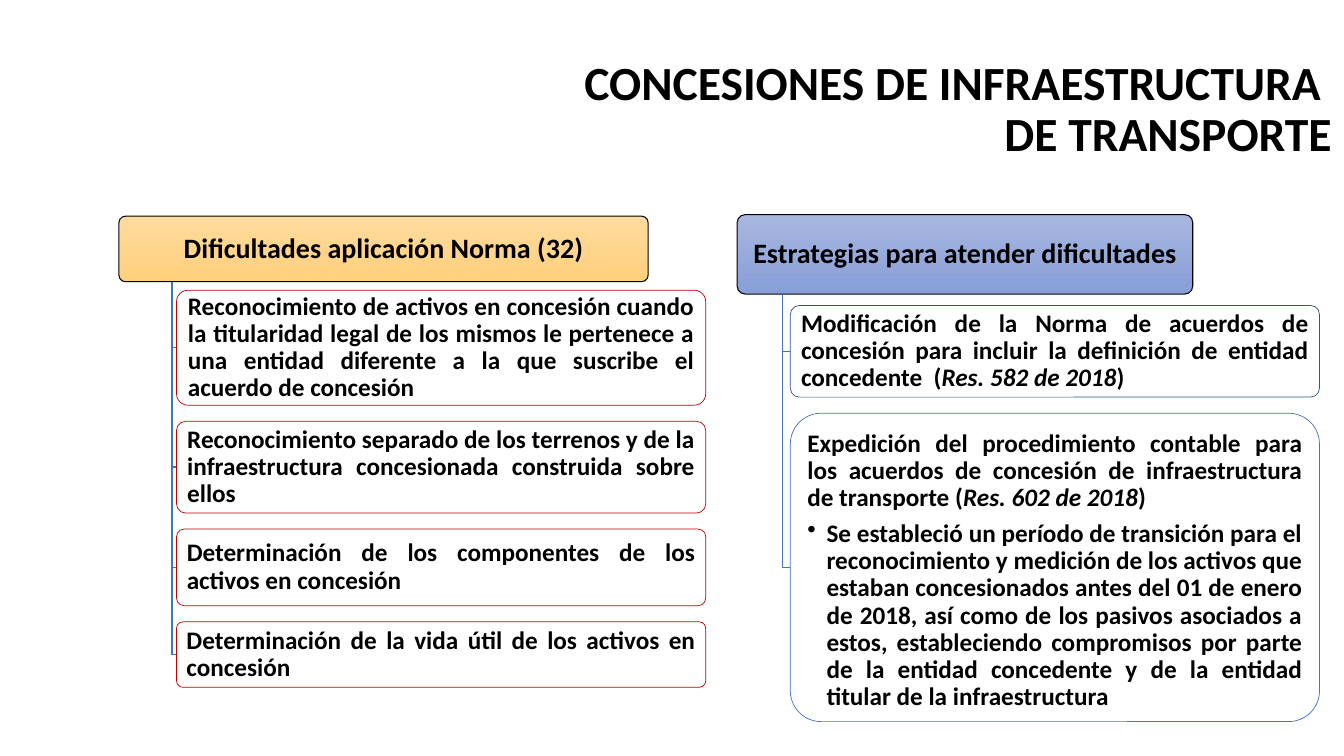
from lxml import etree
from pptx import Presentation
from pptx import util as u
from pptx.dml.color import RGBColor
from pptx.enum import shapes, text
from pptx.oxml.ns import qn

BLACK = RGBColor(0x00, 0x00, 0x00)
WHITE = RGBColor(0xFF, 0xFF, 0xFF)
RED = RGBColor(0xC0, 0x00, 0x00)
BLUE = RGBColor(0x44, 0x72, 0xC4)
NAVY = RGBColor(0x2F, 0x55, 0x97)
AMBER = (RGBColor(0xFF, 0xDB, 0x9E), RGBColor(0xFF, 0xD0, 0x7C))
PERIWINKLE = (RGBColor(0xA8, 0xB7, 0xDF), RGBColor(0x88, 0x9E, 0xD7))

ALIGN = text.PP_ALIGN
ANCHOR = text.MSO_ANCHOR

DIFFICULTIES = [
    (15.2, ["Reconocimiento de activos en concesión cuando la titularidad legal de los "
            "mismos le pertenece a una entidad diferente a la que suscribe el acuerdo "
            "de concesión"]),
    (12.13, ["Reconocimiento separado de los terrenos y de la infraestructura "
             "concesionada construida sobre ellos"]),
    (10.13, ["Determinación de los componentes de los activos en concesión"]),
    (8.67, ["Determinación de la vida útil de los activos en concesión"]),
]
AMENDMENT = (12.13, [
    "Modificación de la Norma de acuerdos de concesión para incluir la definición de "
    "entidad concedente  (*Res. 582 de 2018*)"])
PROCEDURE = (40.8, [
    "Expedición del procedimiento contable para los acuerdos de concesión de "
    "infraestructura de transporte (*Res. 602 de 2018*)",
    "• Se estableció un período de transición para el reconocimiento y medición de los "
    "activos que estaban concesionados antes del 01 de enero de 2018, así como de los "
    "pasivos asociados a estos, estableciendo compromisos por parte de la entidad "
    "concedente y de la entidad titular de la infraestructura"])


class ConcessionSlide:
    """Places elements by percentages of the slide's width and height."""

    font = "Calibri"
    item_width = 39.38
    item_gap = 2.13

    def __init__(self, deck):
        self.width, self.height = deck.slide_width, deck.slide_height
        self.page = deck.slides.add_slide(deck.slide_layouts[5])

    def x(self, share):
        return u.Emu(round(self.width * share / 100))

    def y(self, share):
        return u.Emu(round(self.height * share / 100))

    def set_text(self, frame, paragraphs, size=18, align=ALIGN.JUSTIFY,
                 anchor=ANCHOR.MIDDLE, inset=0.08):
        """Fill a frame; *...* is italic, a leading • a bullet, a newline a line break."""
        frame.word_wrap = True
        frame.auto_size = text.MSO_AUTO_SIZE.NONE
        frame.vertical_anchor = anchor
        frame.margin_left = frame.margin_right = u.Inches(inset)
        frame.margin_top = frame.margin_bottom = u.Inches(min(inset, 0.08))
        for index, words in enumerate(paragraphs):
            para = frame.add_paragraph() if index else frame.paragraphs[0]
            if words.startswith("• "):
                words = words[2:]
                self.add_bullet(para)
            para.alignment = align
            para.line_spacing = 0.9
            if index < len(paragraphs) - 1:
                para.space_after = u.Pt(0.35 * size)
            for row, line in enumerate(words.split("\n")):
                if row:
                    para.add_line_break()
                for part, phrase in enumerate(line.split("*")):
                    span = para.add_run()
                    span.text = phrase
                    span.font.name = self.font
                    span.font.size = u.Pt(size)
                    span.font.bold = True
                    span.font.italic = part % 2 == 1
                    span.font.color.rgb = BLACK

    def add_bullet(self, para):
        props = para._p.get_or_add_pPr()
        indent = u.Inches(0.19)
        props.set("marL", str(indent))
        props.set("indent", str(-indent))
        etree.SubElement(props, qn("a:buChar")).set("char", "•")

    def title(self, words):
        box = self.page.shapes.title
        box.left, box.top = self.x(38.8), self.y(6.8)
        box.width, box.height = self.x(61.05), self.y(12.27)
        self.set_text(box.text_frame, [words], size=34, align=ALIGN.RIGHT,
                      anchor=ANCHOR.TOP, inset=0.1)

    def box(self, left, top, width, height, line, weight):
        box = self.page.shapes.add_shape(
            shapes.MSO_SHAPE.ROUNDED_RECTANGLE,
            self.x(left), self.y(top), self.x(width), self.y(height))
        box.adjustments[0] = 0.1
        box.shadow.inherit = False
        box.line.color.rgb = line
        box.line.width = u.Pt(weight)
        return box

    def header(self, words, left, top, width, height, colours):
        box = self.box(left, top, width, height, BLACK, 0.75)
        box.fill.gradient()
        box.fill.gradient_angle = 270
        for stop, colour, position in zip(box.fill.gradient_stops, colours, (0, 1)):
            stop.color.rgb = colour
            stop.position = position
        self.set_text(box.text_frame, [words], size=20, align=ALIGN.CENTER)

    def item(self, paragraphs, left, top, height, line):
        box = self.box(left, top, self.item_width, height, line, 0.5)
        box.fill.solid()
        box.fill.fore_color.rgb = WHITE
        colour = box._element.spPr.find(qn("a:solidFill"))[0]
        etree.SubElement(colour, qn("a:alpha")).set("val", "90000")
        anchor = ANCHOR.TOP if len(paragraphs) > 1 else ANCHOR.MIDDLE
        self.set_text(box.text_frame, paragraphs, anchor=anchor)

    def branch(self, rail, top, right, middle):
        """Draw the elbow from a header's underside to the side of an item."""
        builder = self.page.shapes.build_freeform(self.x(rail), self.y(top))
        builder.add_line_segments(
            [(self.x(rail), self.y(middle)), (self.x(right), self.y(middle))],
            close=False)
        elbow = builder.convert_to_shape()
        elbow.shadow.inherit = False
        elbow.fill.background()
        elbow.line.color.rgb = BLUE
        elbow.line.width = u.Pt(1)

    def tree(self, heading, header_area, colours, item_left, first_top, items, lines):
        """Hang a column of items from a header, on a rail a tenth of the way in."""
        left, top, width, height = header_area
        self.header(heading, left, top, width, height, colours)
        item_top = first_top
        for (item_height, paragraphs), line in zip(items, lines):
            self.branch(left + width / 10, top + height, item_left,
                        item_top + item_height / 2)
            self.item(paragraphs, item_left, item_top, item_height, line)
            item_top += item_height + self.item_gap


def main():
    deck = Presentation()
    deck.slide_width, deck.slide_height = u.Inches(13.33), u.Inches(7.5)
    slide = ConcessionSlide(deck)
    slide.title("CONCESIONES DE INFRAESTRUCTURA \nDE TRANSPORTE")
    slide.tree("Dificultades aplicación Norma (32)", (8.85, 28.6, 39.38, 8.67), AMBER,
               13.13, 38.4, DIFFICULTIES, [RED] * len(DIFFICULTIES))
    slide.tree("Estrategias para atender dificultades", (54.85, 28.4, 33.9, 10.5),
               PERIWINKLE, 58.8, 40.4, [AMENDMENT, PROCEDURE], [NAVY, BLUE])
    deck.save("out.pptx")


if __name__ == "__main__":
    main()
